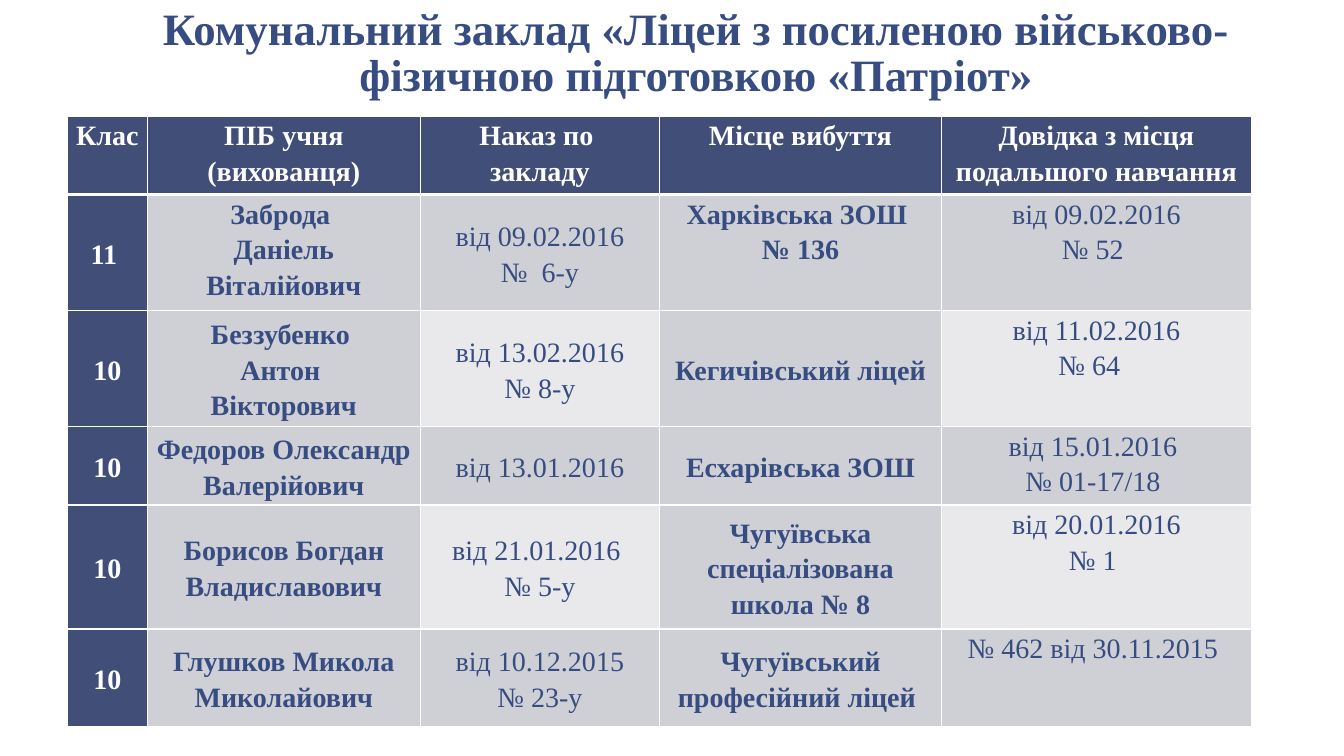
from lxml import etree
from pptx import Presentation
from pptx.dml.color import RGBColor
from pptx.enum.text import MSO_ANCHOR, MSO_AUTO_SIZE, PP_ALIGN
from pptx.oxml.ns import qn
from pptx.util import Pt

PX = 9144
CENTER = PP_ALIGN.CENTER
TOP, MIDDLE, BOTTOM = MSO_ANCHOR.TOP, MSO_ANCHOR.MIDDLE, MSO_ANCHOR.BOTTOM
NO_AUTOFIT = MSO_AUTO_SIZE.NONE

NAVY, INK, WHITE = "414E77", "374C81", "FFFFFF"
GREY, PALE = "CFD0D6", "E9E9EC"

COLUMN_WIDTHS = [79, 271, 237, 280, 307]
ROW_HEIGHTS = [78, 115, 115, 78, 123, 97]
CLASS, STUDENT, ORDER, DESTINATION, CERTIFICATE = range(5)
TOP_CELLS = {(1, STUDENT), (1, DESTINATION)}
PALE_ROWS = {2, 4}

TRANSFERS = [
    ["Клас", "ПІБ учня (вихованця)", "Наказ по \nзакладу", "Місце вибуття",
     "Довідка з місця подальшого навчання"],
    ["11 ", "Заброда \nДаніель\nВіталійович", "від 09.02.2016\n№  6-у",
     "Харківська ЗОШ \n№ 136", "від 09.02.2016\n№ 52 "],
    ["10", "Беззубенко \nАнтон \nВікторович", "від 13.02.2016\n№ 8-у",
     "Кегичівський ліцей", "від 11.02.2016\n№ 64  "],
    ["10", "Федоров Олександр Валерійович", "від 13.01.2016",
     "Есхарівська ЗОШ", "від 15.01.2016 \n№ 01-17/18 "],
    ["10", "Борисов Богдан Владиславович", "від 21.01.2016 \n№ 5-у",
     "Чугуївська спеціалізована школа № 8", "від 20.01.2016\n№ 1 "],
    ["10", "Глушков Микола Миколайович", "від 10.12.2015\n№ 23-у",
     "Чугуївський професійний ліцей ", "№ 462 від 30.11.2015 "],
]


def rgb(value):
    return RGBColor.from_string(value)


class TransferSlide:
    font_name = "Times New Roman"

    def __init__(self, presentation):
        self.slide = presentation.slides.add_slide(presentation.slide_layouts[5])

    def style(self, frame, size, color, bold, spacing):
        for paragraph in frame.paragraphs:
            paragraph.alignment = CENTER
            paragraph.line_spacing = spacing
            paragraph.space_before = paragraph.space_after = Pt(0)
            font = paragraph.font
            font.name, font.size, font.bold = self.font_name, Pt(size), bold
            font.color.rgb = rgb(color)

    def title(self, text, left, top, width, height):
        heading = self.slide.shapes.title
        heading.left, heading.top = left * PX, top * PX
        heading.width, heading.height = width * PX, height * PX
        frame = heading.text_frame
        frame.text = text
        frame.word_wrap = True
        frame.auto_size = NO_AUTOFIT
        frame.vertical_anchor = BOTTOM
        frame.margin_left = frame.margin_right = 13 * PX
        frame.margin_top = frame.margin_bottom = 7 * PX
        self.style(frame, 32, INK, True, 0.85)

    def border(self, cell, side, points):
        properties = cell._tc.get_or_add_tcPr()
        line = etree.SubElement(properties, qn("a:ln" + side), w=str(Pt(points)))
        fill = etree.SubElement(line, qn("a:solidFill"))
        etree.SubElement(fill, qn("a:srgbClr"), val=WHITE)

    def cell(self, cell, text, row, column):
        header = row == 0
        dark = header or column == CLASS
        pale = row in PALE_ROWS and column in (ORDER, CERTIFICATE)
        at_top = header or column == CERTIFICATE or (row, column) in TOP_CELLS
        for side in "LRTB":
            thick = (row, side) in ((0, "B"), (1, "T"))
            self.border(cell, side, 3 if thick else 1)
        cell.fill.solid()
        cell.fill.fore_color.rgb = rgb(NAVY if dark else PALE if pale else GREY)
        cell.margin_left = cell.margin_right = 6 * PX
        cell.margin_top = cell.margin_bottom = 0
        cell.vertical_anchor = TOP if at_top else MIDDLE
        cell.text_frame.text = text
        bold = header or column in (CLASS, STUDENT, DESTINATION)
        self.style(cell.text_frame, 20, WHITE if dark else INK, bold, 1.15)

    def table(self, rows, left, top, widths, heights):
        table = self.slide.shapes.add_table(
            len(rows), len(widths), left * PX, top * PX,
            sum(widths) * PX, sum(heights) * PX).table
        table.horz_banding = False
        for column, width in zip(table.columns, widths):
            column.width = width * PX
        for row_index, (texts, height) in enumerate(zip(rows, heights)):
            table.rows[row_index].height = height * PX
            for column_index, text in enumerate(texts):
                self.cell(table.cell(row_index, column_index), text,
                          row_index, column_index)


def main():
    presentation = Presentation()
    presentation.slide_width, presentation.slide_height = 1333 * PX, 750 * PX
    page = TransferSlide(presentation)
    page.title("Комунальний заклад «Ліцей з посиленою військово-фізичною "
               "підготовкою «Патріот»", 92, 13, 1197, 94)
    page.table(TRANSFERS, 67, 115, COLUMN_WIDTHS, ROW_HEIGHTS)
    presentation.save("out.pptx")


if __name__ == "__main__":
    main()
